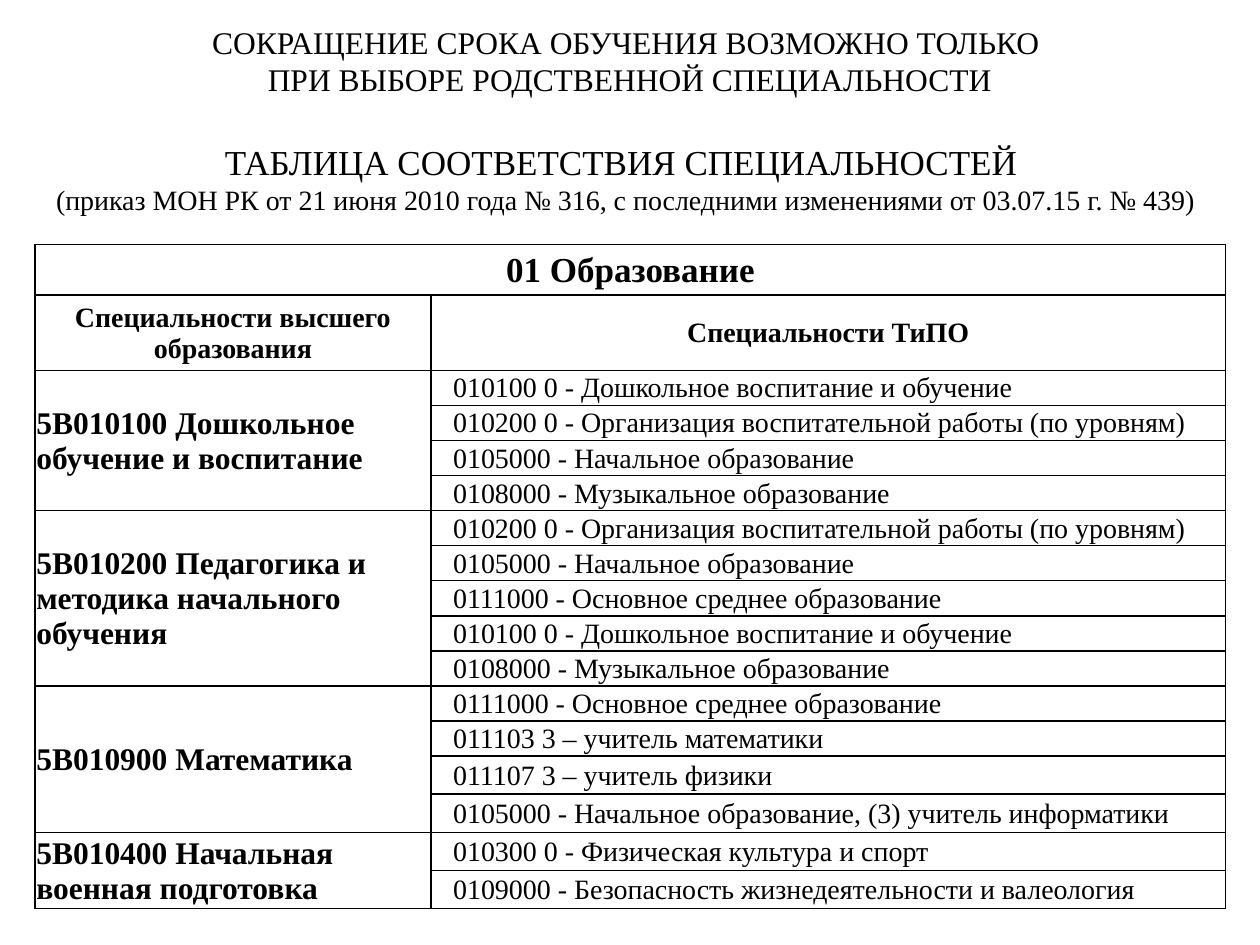
from lxml import etree
from pptx import Presentation
from pptx.dml.color import RGBColor
from pptx.enum.text import MSO_ANCHOR, MSO_AUTO_SIZE, PP_ALIGN
from pptx.oxml.ns import qn
from pptx.util import Pt

BLACK = RGBColor(0x00, 0x00, 0x00)
FONT = "Times New Roman"
LEFT, CENTER = PP_ALIGN.LEFT, PP_ALIGN.CENTER
MIDDLE = MSO_ANCHOR.MIDDLE
GROW = MSO_AUTO_SIZE.SHAPE_TO_FIT_TEXT
BORDER_SIDES = ("a:lnL", "a:lnR", "a:lnT", "a:lnB")

# Each degree specialty with its related vocational specialties
SPECIALTIES = [
    ("5В010100 Дошкольное обучение и воспитание", [
        "010100 0 - Дошкольное воспитание и обучение",
        "010200 0 - Организация воспитательной работы (по уровням)",
        "0105000 - Начальное образование",
        "0108000 - Музыкальное образование"]),
    ("5B010200 Педагогика и методика начального обучения", [
        "010200 0 - Организация воспитательной работы (по уровням)",
        "0105000 - Начальное образование",
        "0111000 - Основное среднее образование",
        "010100 0 - Дошкольное воспитание и обучение",
        "0108000 - Музыкальное образование"]),
    ("5B010900 Математика", [
        "0111000 - Основное среднее образование",
        "011103 3 – учитель математики",
        "011107 3 – учитель физики",
        "0105000 - Начальное образование, (3) учитель информатики"]),
    ("5B010400 Начальная военная подготовка", [
        "010300 0 - Физическая культура и спорт",
        "0109000 - Безопасность жизнедеятельности и валеология"]),
]
COLUMN_WIDTHS = [226.2, 454.2]
ROW_HEIGHTS = [28.8, 43] + [20.05] * 11 + [21.8] * 4


def write(paragraph, text, size=16, bold=False, align=LEFT):
    paragraph.text = text
    paragraph.alignment = align
    for run in paragraph.runs:
        run.font.name = FONT
        run.font.size = Pt(size)
        run.font.bold = bold
        run.font.color.rgb = BLACK


class SlideBuilder:
    def __init__(self, slide, border=1, inset=0.75, indent=12):
        self.slide = slide
        self.border = border
        self.inset = inset
        self.indent = indent

    def text_box(self, left, top, width, height, lines):
        box = self.slide.shapes.add_textbox(Pt(left), Pt(top), Pt(width), Pt(height))
        frame = box.text_frame
        frame.word_wrap = True
        frame.auto_size = GROW
        for number, (text, size) in enumerate(lines):
            paragraph = frame.add_paragraph() if number else frame.paragraphs[0]
            write(paragraph, text, size=size, align=CENTER)

    def table(self, left, top, widths, heights):
        frame = self.slide.shapes.add_table(
            len(heights), len(widths), Pt(left), Pt(top), Pt(sum(widths)), Pt(sum(heights)))
        table = frame.table
        table.first_row = table.horz_banding = False
        for column, width in zip(table.columns, widths):
            column.width = Pt(width)
        for row, height in zip(table.rows, heights):
            row.height = Pt(height)
        for cell in table.iter_cells():
            self.style_cell(cell)
        return table

    def style_cell(self, cell):
        cell.margin_left = cell.margin_right = cell.margin_top = Pt(self.inset)
        cell.margin_bottom = 0
        cell.vertical_anchor = MIDDLE
        properties = cell._tc.get_or_add_tcPr()
        for side in BORDER_SIDES:
            line = etree.SubElement(properties, qn(side), w=str(Pt(self.border)))
            fill = etree.SubElement(line, qn("a:solidFill"))
            etree.SubElement(fill, qn("a:srgbClr"), val=str(BLACK))
        cell.fill.background()

    def cell(self, cell, text, indented=False, **style):
        if indented:
            cell.margin_left = Pt(self.inset + self.indent)
        write(cell.text_frame.paragraphs[0], text, **style)


def main():
    presentation = Presentation()
    presentation.slide_width, presentation.slide_height = Pt(720), Pt(540)
    builder = SlideBuilder(presentation.slides.add_slide(presentation.slide_layouts[6]))

    # Table headings
    table = builder.table(20, 139.8, COLUMN_WIDTHS, ROW_HEIGHTS)
    table.cell(0, 0).merge(table.cell(0, 1))
    builder.cell(table.cell(0, 0), "01 Образование", size=20, bold=True, align=CENTER)
    for column, heading in enumerate(["Специальности высшего образования", "Специальности ТиПО"]):
        builder.cell(table.cell(1, column), heading, bold=True, align=CENTER)

    # Specialty groups
    first = 2
    for degree, related in SPECIALTIES:
        last = first + len(related) - 1
        table.cell(first, 0).merge(table.cell(last, 0))
        builder.cell(table.cell(first, 0), degree, size=18, bold=True)
        for row, vocational in enumerate(related, first):
            builder.cell(table.cell(row, 1), vocational, indented=True)
        first = last + 1

    # Titles
    builder.text_box(14.4, 77, 686.2, 51, [
        ("ТАБЛИЦА СООТВЕТСТВИЯ СПЕЦИАЛЬНОСТЕЙ ", 20),
        ("(приказ МОН РК от 21 июня 2010 года № 316, "
         "с последними изменениями от 03.07.15 г. № 439)", 16)])
    builder.text_box(8.6, 9.4, 702.7, 51, [
        ("СОКРАЩЕНИЕ СРОКА ОБУЧЕНИЯ ВОЗМОЖНО ТОЛЬКО \n"
         "ПРИ ВЫБОРЕ РОДСТВЕННОЙ СПЕЦИАЛЬНОСТИ", 18)])

    presentation.save("out.pptx")


if __name__ == "__main__":
    main()
